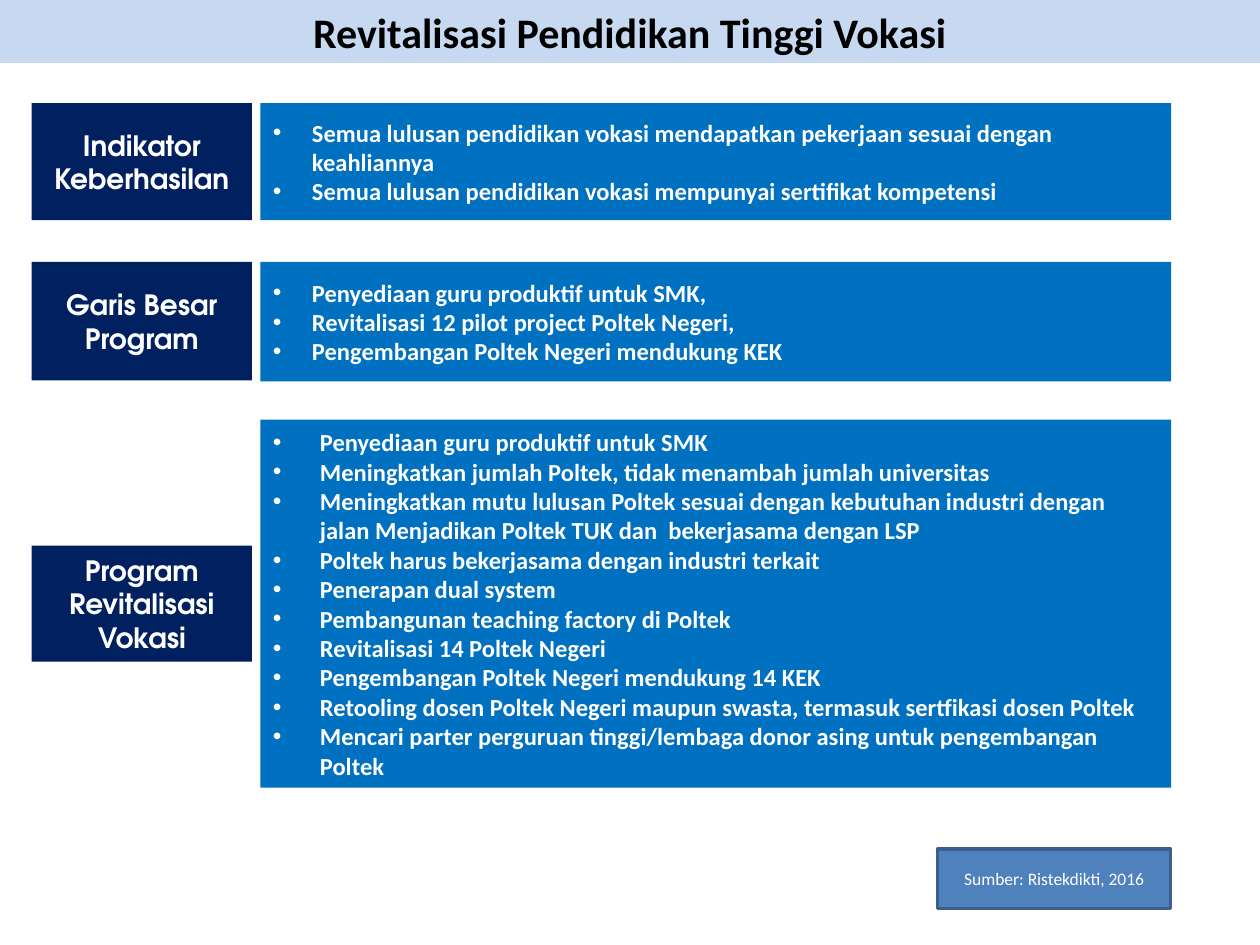
from lxml.etree import SubElement
from pptx import Presentation
from pptx.dml.color import RGBColor
from pptx.enum.shapes import MSO_SHAPE
from pptx.enum.text import MSO_ANCHOR, PP_ALIGN
from pptx.oxml.ns import qn
from pptx.util import Cm, Pt

WHITE = "FFFFFF"
NAVY = "002060"
BLUE = "0070C0"
LABEL_LEFT, LABEL_WIDTH = 0.64, 4.44
CONTENT_LEFT, CONTENT_WIDTH = 5.25, 18.36

SECTIONS = [
    {
        "label": ["Indikator Keberhasilan"],
        "label_box": (2.08, 2.36),
        "content_box": (2.08, 2.36),
        "indent": 0.79,
        "items": [
            "Semua lulusan pendidikan vokasi mendapatkan pekerjaan sesuai dengan keahliannya",
            "Semua lulusan pendidikan vokasi mempunyai sertifikat kompetensi",
        ],
    },
    {
        "label": ["Garis Besar Program"],
        "label_box": (5.28, 2.39),
        "content_box": (5.28, 2.41),
        "indent": 0.79,
        "items": [
            "Penyediaan guru produktif untuk SMK,",
            "Revitalisasi 12 pilot project Poltek Negeri,",
            "Pengembangan Poltek Negeri mendukung KEK",
        ],
    },
    {
        "label": ["Program Revitalisasi", "Vokasi"],
        "label_box": (11, 2.34),
        "content_box": (8.46, 7.42),
        "indent": 0.95,
        "items": [
            "Penyediaan guru produktif untuk SMK",
            "Meningkatkan jumlah Poltek, tidak menambah jumlah universitas",
            "Meningkatkan mutu lulusan Poltek sesuai dengan kebutuhan industri dengan "
            "jalan Menjadikan Poltek TUK dan  bekerjasama dengan LSP",
            "Poltek harus bekerjasama dengan industri terkait",
            "Penerapan dual system",
            "Pembangunan teaching factory di Poltek",
            "Revitalisasi 14 Poltek Negeri",
            "Pengembangan Poltek Negeri mendukung 14 KEK",
            "Retooling dosen Poltek Negeri maupun swasta, termasuk sertfikasi dosen Poltek",
            "Mencari parter perguruan tinggi/lembaga donor asing untuk pengembangan Poltek",
        ],
    },
]


def color(hex_string):
    return RGBColor.from_string(hex_string)


def add_box(slide, left, top, width, height, fill, line=None):
    shape = slide.shapes.add_shape(
        MSO_SHAPE.RECTANGLE, Cm(left), Cm(top), Cm(width), Cm(height)
    )
    shape.shadow.inherit = False
    shape.fill.solid()
    shape.fill.fore_color.rgb = color(fill)
    if line:
        shape.line.color.rgb = color(line)
        shape.line.width = Pt(2)
    else:
        shape.line.fill.background()
    return shape


def add_bullet(paragraph, indent):
    properties = paragraph._p.get_or_add_pPr()
    properties.set("marL", str(Cm(indent)))
    properties.set("indent", str(-Cm(indent)))
    SubElement(properties, qn("a:buFont"), typeface="Arial")
    SubElement(properties, qn("a:buChar"), char="•")


def write_text(shape, lines, size=14, font="Calibri", text_color=WHITE, bold=True,
               align=PP_ALIGN.CENTER, anchor=MSO_ANCHOR.MIDDLE, indent=None):
    frame = shape.text_frame
    frame.word_wrap = True
    frame.vertical_anchor = anchor
    for index, line in enumerate(lines):
        paragraph = frame.add_paragraph() if index else frame.paragraphs[0]
        paragraph.alignment = align
        if indent:
            add_bullet(paragraph, indent)
        run = paragraph.add_run()
        run.text = line
        run.font.size = Pt(size)
        run.font.name = font
        run.font.bold = bold
        run.font.color.rgb = color(text_color)


def add_section(slide, section):
    top, height = section["content_box"]
    content = add_box(slide, CONTENT_LEFT, top, CONTENT_WIDTH, height, BLUE)
    write_text(content, section["items"], align=PP_ALIGN.LEFT, indent=section["indent"])

    top, height = section["label_box"]
    label = add_box(slide, LABEL_LEFT, top, LABEL_WIDTH, height, NAVY)
    write_text(label, section["label"], size=16, font="TeX Gyre Adventor")


def main():
    presentation = Presentation()
    presentation.slide_width = Cm(25.4)
    presentation.slide_height = Cm(19.05)
    slide = presentation.slides.add_slide(presentation.slide_layouts[6])

    title = add_box(slide, 0, 0, 25.4, 1.27, "C6D9F1")
    write_text(title, ["Revitalisasi Pendidikan Tinggi Vokasi"], size=24,
               text_color="000000", anchor=MSO_ANCHOR.TOP)

    for section in SECTIONS:
        add_section(slide, section)

    source = add_box(slide, 18.9, 17.12, 4.7, 1.2, "4F81BD", line="3A5F8C")
    write_text(source, ["Sumber: Ristekdikti, 2016"], size=10, bold=False)

    presentation.save("out.pptx")


if __name__ == "__main__":
    main()
